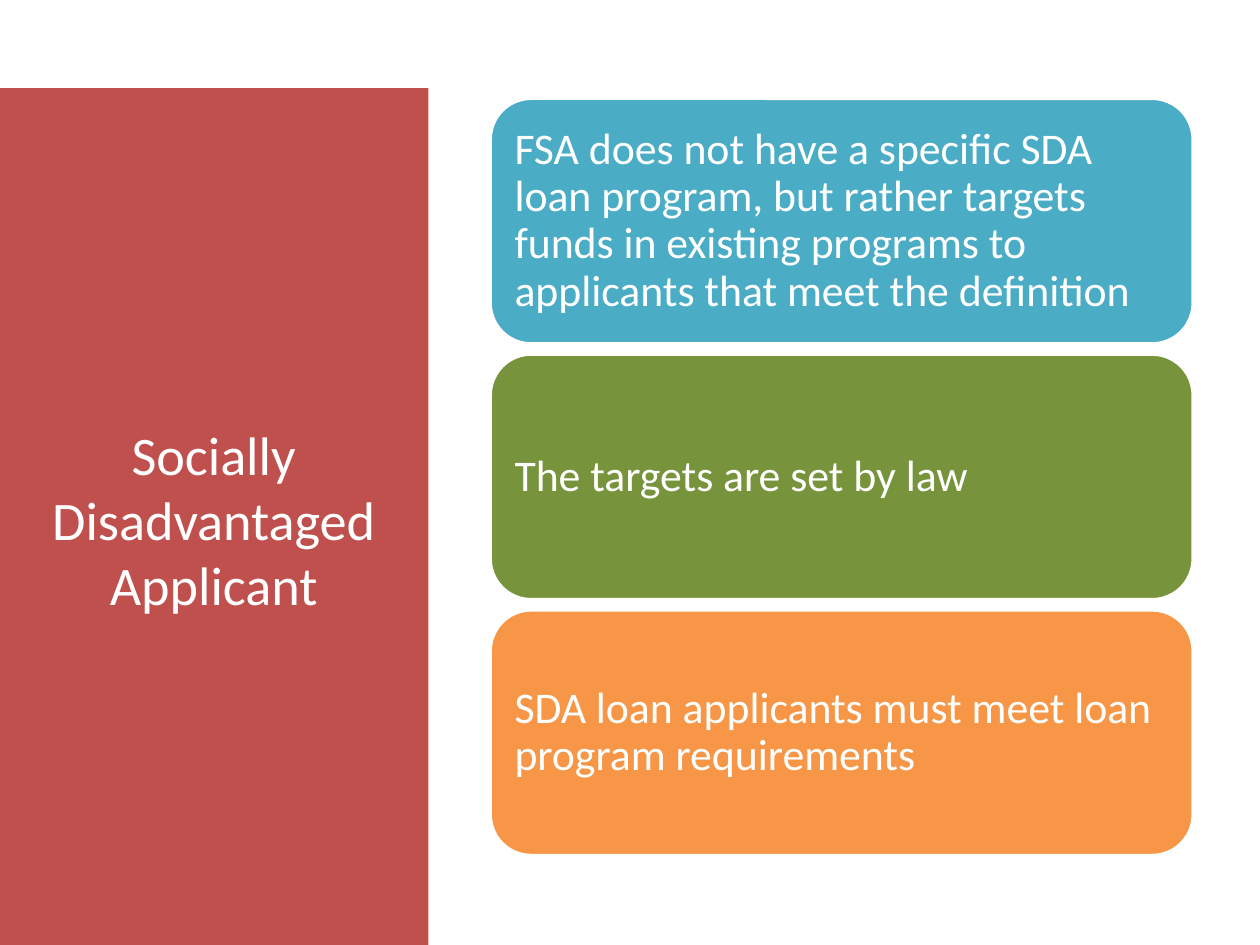
from pptx import Presentation
from pptx.dml.color import RGBColor
from pptx.enum.shapes import MSO_SHAPE as Shape
from pptx.enum.text import MSO_ANCHOR as Anchor, PP_ALIGN as Align
from pptx.util import Inches, Pt

COLORS = {
    "white": "FFFFFF",
    "red": "C0504D",
    "blue": "4BACC6",
    "green": "77933C",
    "orange": "F79646",
}

POINTS = [
    ("FSA does not have a specific SDA loan program, but rather targets funds "
     "in existing programs to applicants that meet the definition", "blue"),
    ("The targets are set by law", "green"),
    ("SDA loan applicants must meet loan program requirements", "orange"),
]


def color(name):
    return RGBColor.from_string(COLORS[name])


def add_box(slide, kind, left, top, width, height, fill, line=None):
    shape = slide.shapes.add_shape(
        kind, Inches(left), Inches(top), Inches(width), Inches(height))
    shape.shadow.inherit = False
    shape.fill.solid()
    shape.fill.fore_color.rgb = color(fill)
    if line:
        shape.line.color.rgb = color(line)
        shape.line.width = Pt(2)
    else:
        shape.line.fill.background()
    return shape


def write_text(shape, text, size, align=Align.LEFT, line_spacing=1.0, side_inset=0.1):
    frame = shape.text_frame
    frame.word_wrap = True
    frame.vertical_anchor = Anchor.MIDDLE
    frame.margin_left = frame.margin_right = Inches(side_inset)
    paragraph = frame.paragraphs[0]
    paragraph.text = text
    paragraph.alignment = align
    paragraph.line_spacing = line_spacing
    paragraph.font.name = "Calibri"
    paragraph.font.size = Pt(size)
    paragraph.font.color.rgb = color("white")


def add_title_panel(slide, left, top, width, height):
    panel = add_box(slide, Shape.RECTANGLE, left, top, width, height, "red")
    write_text(panel, "Socially Disadvantaged Applicant", 31, align=Align.CENTER)


def add_point_cards(slide, left, top, width, height, gap=0.08):
    card_height = (height - gap * (len(POINTS) - 1)) / len(POINTS)
    for index, (text, fill) in enumerate(POINTS):
        card_top = top + index * (card_height + gap)
        card = add_box(slide, Shape.ROUNDED_RECTANGLE, left, card_top,
                       width, card_height, fill, line="white")
        write_text(card, text, 25, line_spacing=0.9)


def main():
    presentation = Presentation()
    presentation.slide_width = Inches(10)
    presentation.slide_height = Inches(7.5)
    slide = presentation.slides.add_slide(presentation.slide_layouts[6])

    # Cards on the right, title panel on the left
    add_point_cards(slide, 3.89, 0.78, 5.58, 6.01)
    add_title_panel(slide, -0.01, 0.7, 3.41, 6.83)

    presentation.save("out.pptx")


if __name__ == "__main__":
    main()
